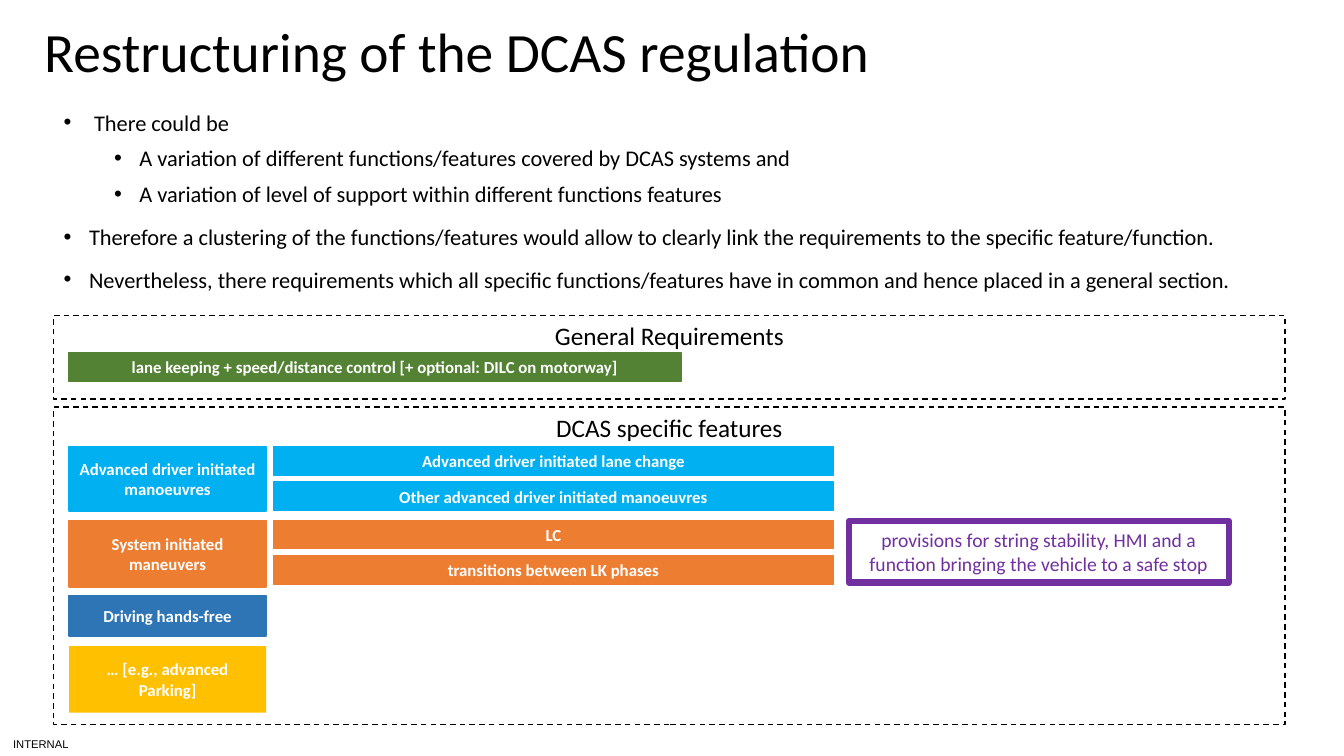
"""Build the slide on restructuring the DCAS regulation."""
from lxml import etree
from pptx import Presentation
from pptx.dml.color import RGBColor
from pptx.enum.dml import MSO_LINE
from pptx.enum.shapes import MSO_SHAPE
from pptx.enum.text import MSO_ANCHOR, MSO_AUTO_SIZE, PP_ALIGN
from pptx.oxml.ns import qn
from pptx.util import Cm, Pt

RECTANGLE = MSO_SHAPE.RECTANGLE
DASH = MSO_LINE.DASH
TOP, MIDDLE = MSO_ANCHOR.TOP, MSO_ANCHOR.MIDDLE
NO_AUTOFIT = MSO_AUTO_SIZE.NONE
LEFT, CENTER = PP_ALIGN.LEFT, PP_ALIGN.CENTER

BLACK = RGBColor(0x00, 0x00, 0x00)
WHITE = RGBColor(0xFF, 0xFF, 0xFF)
GREEN = RGBColor(0x54, 0x82, 0x35)
CYAN = RGBColor(0x00, 0xB0, 0xF0)
ORANGE = RGBColor(0xED, 0x7D, 0x31)
BLUE = RGBColor(0x2E, 0x75, 0xB6)
YELLOW = RGBColor(0xFF, 0xC0, 0x00)
PURPLE = RGBColor(0x70, 0x30, 0xA0)

PANEL_LEFT, PANEL_WIDTH = 1.35, 31.04
GROUP_LEFT, GROUP_WIDTH = 1.74, 4.97
FEATURE_LEFT, FEATURE_WIDTH = 6.9, 14.1
BAR_HEIGHT, BAR_PITCH = 0.72, 0.9


def style_text(para, size, color, bold=False, name="Calibri"):
    para.font.size = Pt(size)
    para.font.name = name
    para.font.bold = bold
    para.font.color.rgb = color


def add_box(text, left, top, width, height, fill, line, line_width=1,
            size=12, color=WHITE, bold=True, anchor=MIDDLE):
    box = slide.shapes.add_shape(RECTANGLE, Cm(left), Cm(top), Cm(width), Cm(height))
    box.shadow.inherit = False
    if fill is None:
        box.fill.background()
    else:
        box.fill.solid()
        box.fill.fore_color.rgb = fill
    if line is None:
        box.line.fill.background()
    else:
        box.line.color.rgb = line
        box.line.width = Pt(line_width)
    frame = box.text_frame
    frame.word_wrap = True
    frame.vertical_anchor = anchor
    para = frame.paragraphs[0]
    para.text = text
    para.alignment = CENTER
    style_text(para, size, color, bold)
    return box


deck = Presentation()
deck.slide_width, deck.slide_height = Cm(33.87), Cm(19.05)
slide = deck.slides.add_slide(deck.slide_layouts[1])

title = slide.shapes.title
title.left, title.top, title.width, title.height = Cm(0.86), Cm(0.71), Cm(24.82), Cm(1.35)
title.text_frame.auto_size = NO_AUTOFIT
title.text_frame.vertical_anchor = MIDDLE
para = title.text_frame.paragraphs[0]
para.text = "Restructuring of the DCAS regulation"
para.alignment = LEFT
para.line_spacing = 0.9
style_text(para, 39.6, BLACK)

body = slide.placeholders[1]
body.left, body.top, body.width, body.height = Cm(PANEL_LEFT), Cm(2.57), Cm(PANEL_WIDTH), Cm(5.49)
body.text_frame.auto_size = NO_AUTOFIT
bullets = [
    (0, " There could be"),
    (1, "A variation of different functions/features covered by DCAS systems and"),
    (1, "A variation of level of support within different functions features"),
    (0, "Therefore a clustering of the functions/features would allow to clearly link "
        "the requirements to the specific feature/function."),
    (0, "Nevertheless, there requirements which all specific functions/features have in "
        "common and hence placed in a general section."),
]
for index, (level, text) in enumerate(bullets):
    para = body.text_frame.paragraphs[0] if index == 0 else body.text_frame.add_paragraph()
    para.text = text
    para.level = level
    para.line_spacing = 1.07
    para.space_before = Pt(0 if index == 0 else 5 if level else 10)
    properties = para._p.get_or_add_pPr()
    properties.set("marL", str(Cm(1.91 if level else 0.64)))
    properties.set("indent", str(Cm(-0.64)))
    etree.SubElement(properties, qn("a:buFont")).set("typeface", "Arial")
    etree.SubElement(properties, qn("a:buChar")).set("char", "•")
    style_text(para, 16, BLACK)

panels = [("General Requirements", 7.95, 2.11), ("DCAS specific features", 10.26, 8.0)]
for name, top, height in panels:
    panel = add_box(name, PANEL_LEFT, top, PANEL_WIDTH, height, None, BLACK,
                    size=18, color=BLACK, bold=False, anchor=TOP)
    panel.line.dash_style = DASH

add_box("lane keeping + speed/distance control [+ optional: DILC on motorway]",
        GROUP_LEFT, 8.89, 15.42, BAR_HEIGHT, GREEN, GREEN)

groups = [
    ("Advanced driver initiated manoeuvres", 11.25, 1.63, CYAN, CYAN,
     ["Advanced driver initiated lane change", "Other advanced driver initiated manoeuvres"]),
    ("System initiated maneuvers", 13.11, 1.68, ORANGE, ORANGE,
     ["LC", "transitions between LK phases"]),
    ("Driving hands-free", 15.01, 1.02, BLUE, BLUE, []),
    ("… [e.g., advanced Parking]", 16.28, 1.68, YELLOW, None, []),
]
for name, top, height, fill, line, features in groups:
    add_box(name, GROUP_LEFT, top, GROUP_WIDTH, height, fill, line)
    for row, feature in enumerate(features):
        add_box(feature, FEATURE_LEFT, top + row * BAR_PITCH, FEATURE_WIDTH, BAR_HEIGHT, fill, line)

add_box("provisions for string stability, HMI and a function bringing the vehicle to a safe stop",
        21.39, 13.13, 9.58, 1.55, None, PURPLE, line_width=4.5,
        size=14, color=PURPLE, bold=False)

label = slide.shapes.add_textbox(Cm(0), Cm(18.44), Cm(2.06), Cm(0.61))
frame = label.text_frame
frame.margin_left = Cm(0.33)
frame.margin_right = frame.margin_top = frame.margin_bottom = Cm(0)
frame.word_wrap = True
frame.vertical_anchor = MIDDLE
para = frame.paragraphs[0]
para.text = "INTERNAL"
style_text(para, 8, BLACK, name="Arial")

deck.save("out.pptx")
